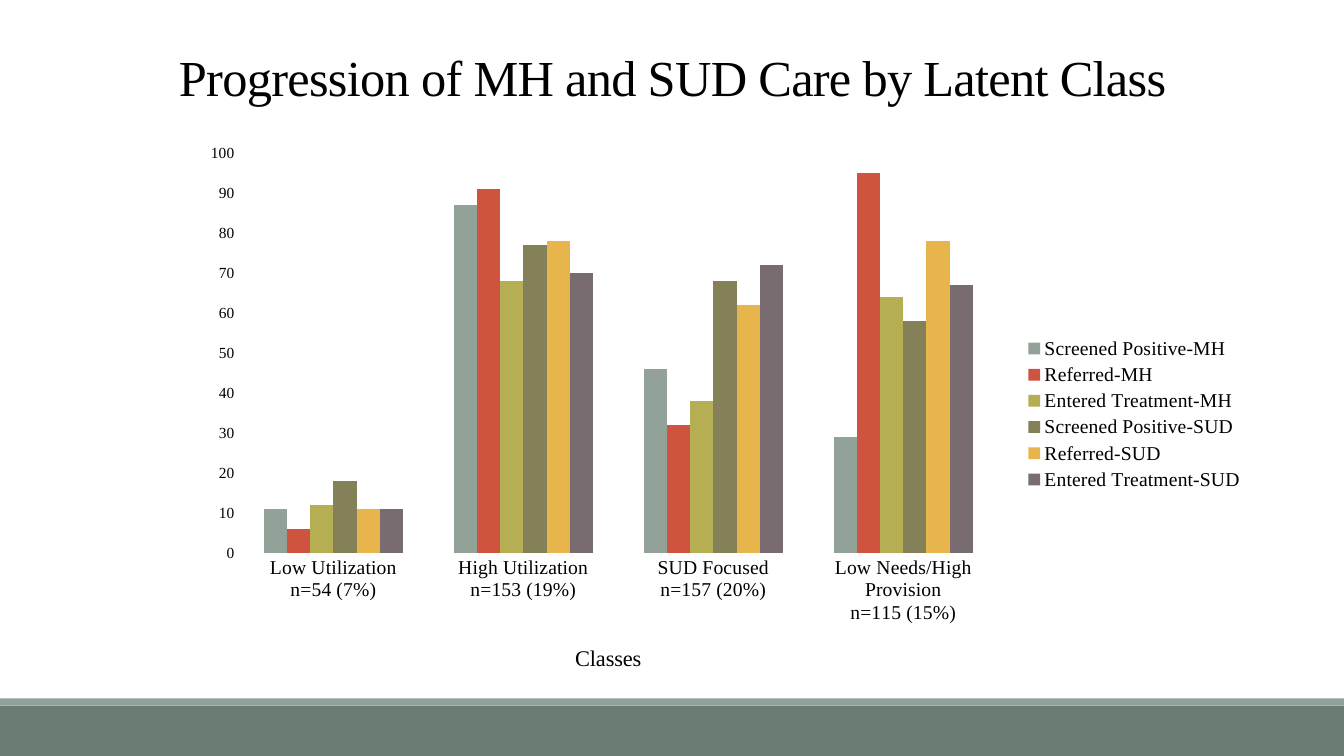
from lxml.etree import SubElement
from pptx import Presentation
from pptx.chart.data import CategoryChartData
from pptx.dml.color import RGBColor
from pptx.enum.chart import XL_CHART_TYPE, XL_LEGEND_POSITION, XL_TICK_MARK
from pptx.enum.shapes import MSO_SHAPE
from pptx.enum.text import MSO_ANCHOR, PP_ALIGN
from pptx.oxml.ns import qn
from pptx.util import Inches, Pt

FONT = "Times New Roman"
CLASSES = [
    "Low Utilization\nn=54 (7%)",
    "High Utilization\nn=153 (19%)",
    "SUD Focused\nn=157 (20%)",
    "Low Needs/High Provision\nn=115 (15%)",
]
SERIES = [
    ("Screened Positive-MH", (11, 87, 46, 29), "93A299"),
    ("Referred-MH", (6, 91, 32, 95), "CF543F"),
    ("Entered Treatment-MH", (12, 68, 38, 64), "B5AE53"),
    ("Screened Positive-SUD", (18, 77, 68, 58), "848058"),
    ("Referred-SUD", (11, 78, 62, 78), "E8B54D"),
    ("Entered Treatment-SUD", (11, 70, 72, 67), "786C71"),
]


def color(hex_value):
    return RGBColor.from_string(hex_value)


def style_font(font, size):
    font.name = FONT
    font.size = Pt(size)
    font.bold = False
    font.color.rgb = color("000000")


def set_layout(element, index, **fractions):
    for old_layout in element.findall(qn("c:layout")):
        element.remove(old_layout)
    layout = SubElement(element, qn("c:layout"))
    element.insert(index, layout)
    manual = SubElement(layout, qn("c:manualLayout"))
    settings = {"xMode": "edge", "yMode": "edge", **fractions}
    if element.tag == qn("c:plotArea"):
        settings = {"layoutTarget": "inner", **settings}
    for name, value in settings.items():
        SubElement(manual, qn(f"c:{name}")).set("val", str(value))


def add_footer(slide, left, top, width, height):
    stripe = 0.07
    bands = [
        (top + stripe, height - stripe, "6B7D72"),
        (top, stripe, "93A299"),
    ]
    for band_top, band_height, fill in bands:
        band = slide.shapes.add_shape(
            MSO_SHAPE.RECTANGLE,
            Inches(left), Inches(band_top), Inches(width), Inches(band_height),
        )
        band.shadow.inherit = False
        band.fill.solid()
        band.fill.fore_color.rgb = color(fill)
        band.line.fill.background()


def add_title(slide, left, top, width, height):
    box = slide.shapes.add_textbox(
        Inches(left), Inches(top), Inches(width), Inches(height)
    )
    frame = box.text_frame
    frame.word_wrap = True
    frame.vertical_anchor = MSO_ANCHOR.BOTTOM
    paragraph = frame.paragraphs[0]
    paragraph.alignment = PP_ALIGN.CENTER
    paragraph.line_spacing = 0.85
    run = paragraph.add_run()
    run.text = "Progression of MH and SUD Care by Latent Class"
    style_font(run.font, 36)
    run.font._element.set("spc", "-50")


def style_axes(chart):
    classes = chart.category_axis
    classes.major_tick_mark = XL_TICK_MARK.NONE
    classes.format.line.fill.background()
    style_font(classes.tick_labels.font, 14)
    run = classes.axis_title.text_frame.paragraphs[0].add_run()
    run.text = "Classes"
    style_font(run.font, 16)
    set_layout(classes.axis_title._element, 1, x=0.36, y=0.91)

    values = chart.value_axis
    values.minimum_scale = 0
    values.maximum_scale = 100
    values.major_unit = 10
    values.has_major_gridlines = False
    values.major_tick_mark = XL_TICK_MARK.NONE
    values.format.line.fill.background()
    style_font(values.tick_labels.font, 11)


def add_care_chart(slide, left, top, width, height):
    data = CategoryChartData()
    data.categories = CLASSES
    for name, values, _ in SERIES:
        data.add_series(name, values)
    chart = slide.shapes.add_chart(
        XL_CHART_TYPE.COLUMN_CLUSTERED,
        Inches(left), Inches(top), Inches(width), Inches(height), data,
    ).chart
    chart.has_title = False
    style_font(chart.font, 10)

    plot = chart.plots[0]
    plot.gap_width = 219
    plot.overlap = 0
    plot.vary_by_categories = False
    for series, (_, _, fill) in zip(plot.series, SERIES):
        series.format.fill.solid()
        series.format.fill.fore_color.rgb = color(fill)

    style_axes(chart)
    chart.has_legend = True
    legend = chart.legend
    legend.position = XL_LEGEND_POSITION.RIGHT
    legend.include_in_layout = False
    style_font(legend.font, 14)
    set_layout(legend._element, 1, x=0.78, y=0.36, w=0.22, h=0.29)
    plot_area = chart._chartSpace.chart.plotArea
    set_layout(plot_area, 0, x=0.047, y=0.036, w=0.715, h=0.719)


def main():
    presentation = Presentation()
    presentation.slide_width = Inches(13.33)
    presentation.slide_height = Inches(7.5)
    slide = presentation.slides.add_slide(presentation.slide_layouts[6])
    add_footer(slide, 0, 6.93, 13.33, 0.57)
    add_title(slide, 0.92, -0.14, 11.5, 1.25)
    add_care_chart(slide, 1.87, 1.32, 10.54, 5.52)
    presentation.save("out.pptx")


if __name__ == "__main__":
    main()
